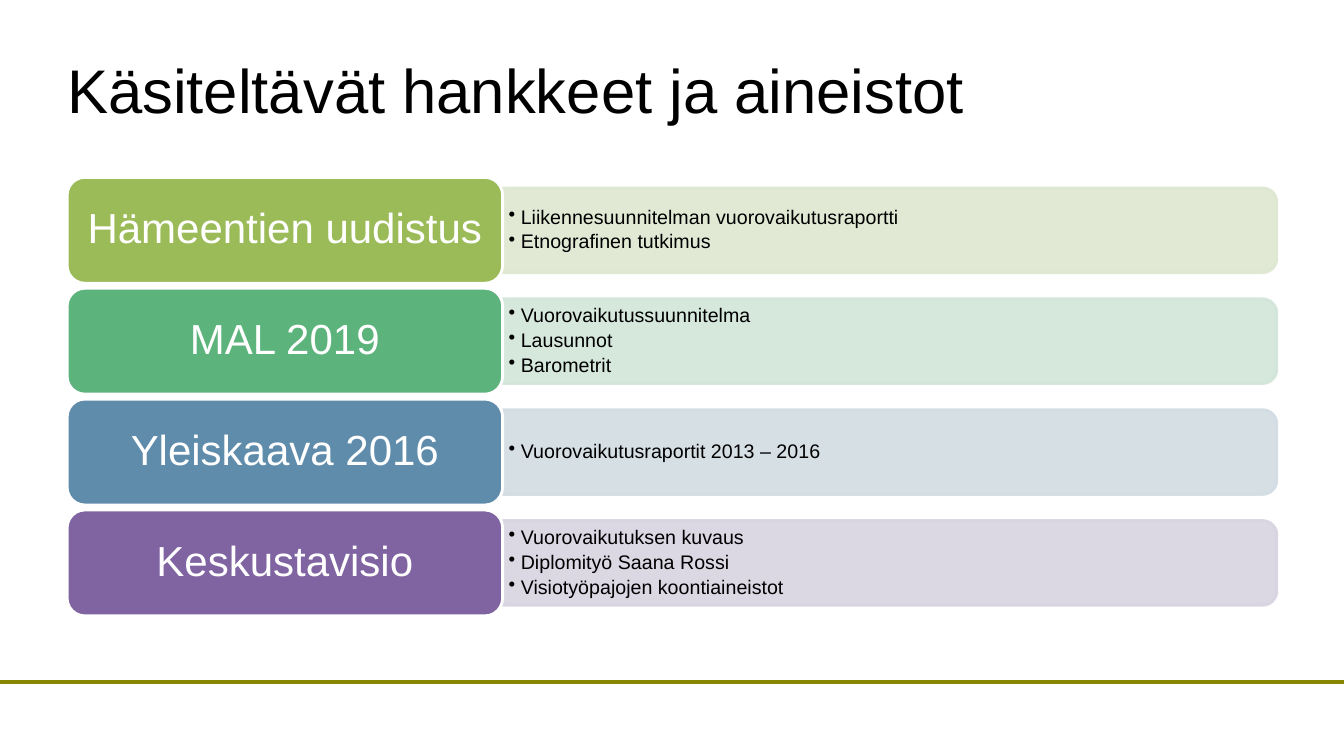
from dataclasses import dataclass

from lxml.etree import SubElement
from pptx import Presentation
from pptx.dml.color import RGBColor
from pptx.enum.shapes import MSO_CONNECTOR, MSO_SHAPE as Geometry
from pptx.enum.text import MSO_ANCHOR as Anchor, PP_ALIGN as Align
from pptx.oxml.ns import qn
from pptx.shapes.autoshape import Shape
from pptx.slide import Slide
from pptx.text.text import TextFrame, _Paragraph as Paragraph
from pptx.util import Inches, Pt

WIDTH, HEIGHT = 13.33, 7.5
COLUMN = WIDTH * 0.036
MARGIN = WIDTH * 0.05
LABEL_WIDTH, BAND_WIDTH = 9 * COLUMN, 16 * COLUMN
BAND_LEFT = MARGIN + LABEL_WIDTH
FIRST_ROW, ROW_PITCH = 1.76, 1.1
LABEL_HEIGHT, BAND_HEIGHT, MATERIALS_HEIGHT = 1.05, 0.84, 0.76
COLOURS = {
    "text": "000000", "white": "FFFFFF", "rule": "878802",
    "olive": "9BBB59", "olive band": "DEE7D1",
    "green": "5CB37C", "green band": "D2E5D9",
    "blue": "608CAB", "blue band": "D2DCE2",
    "purple": "8064A2", "purple band": "D8D3E0",
}


@dataclass(frozen=True)
class Project:
    """A planning project with its hue and source materials."""
    title: str
    hue: str
    materials: tuple[str, ...]


PROJECTS = (
    Project("Hämeentien uudistus", "olive",
            ("Liikennesuunnitelman vuorovaikutusraportti", "Etnografinen tutkimus")),
    Project("MAL 2019", "green",
            ("Vuorovaikutussuunnitelma", "Lausunnot", "Barometrit")),
    Project("Yleiskaava 2016", "blue", ("Vuorovaikutusraportit 2013 – 2016",)),
    Project("Keskustavisio", "purple",
            ("Vuorovaikutuksen kuvaus", "Diplomityö Saana Rossi",
             "Visiotyöpajojen koontiaineistot")),
)


def colour(name: str) -> RGBColor:
    """Look up a named colour."""
    return RGBColor.from_string(COLOURS[name])


def set_frame(frame: TextFrame, across: float, down: float) -> None:
    """Wrap and vertically centre a frame with the given insets."""
    frame.word_wrap = True
    frame.vertical_anchor = Anchor.MIDDLE
    frame.margin_left = frame.margin_right = Inches(across)
    frame.margin_top = frame.margin_bottom = Inches(down)


def write(paragraph: Paragraph, text: str, size: float, ink: str) -> None:
    """Fill a paragraph with text in the slide's typeface."""
    paragraph.text = text
    paragraph.line_spacing = 0.9
    paragraph.font.name = "Arial"
    paragraph.font.size = Pt(size)
    paragraph.font.color.rgb = colour(ink)


def add_block(slide: Slide, geometry: Geometry, left: float, top: float,
              width: float, height: float, fill: str, outline: str) -> Shape:
    """Add a flat filled shape with a two-point outline."""
    block = slide.shapes.add_shape(
        geometry, Inches(left), Inches(top), Inches(width), Inches(height))
    block.shadow.inherit = False
    block.fill.solid()
    block.fill.fore_color.rgb = colour(fill)
    block.line.color.rgb = colour(outline)
    block.line.width = Pt(2)
    return block


def add_band(slide: Slide, middle: float, hue: str) -> None:
    """Add a translucent band rounded at its right end."""
    band = add_block(slide, Geometry.ROUND_2_SAME_RECTANGLE,
                     BAND_LEFT + (BAND_WIDTH - BAND_HEIGHT) / 2,
                     middle - BAND_WIDTH / 2, BAND_HEIGHT, BAND_WIDTH, hue, hue)
    band.rotation = 90
    for tint in band._element.spPr.iter(qn("a:srgbClr")):
        SubElement(tint, qn("a:alpha"), val="90000")


def add_materials(slide: Slide, middle: float, materials: tuple[str, ...]) -> None:
    """List a project's materials as bullets over its band."""
    listing = slide.shapes.add_textbox(
        Inches(BAND_LEFT), Inches(middle - MATERIALS_HEIGHT / 2),
        Inches(BAND_WIDTH - 0.04), Inches(MATERIALS_HEIGHT)).text_frame
    set_frame(listing, 0.06, 0.03)
    for index, material in enumerate(materials):
        item = listing.add_paragraph() if index else listing.paragraphs[0]
        item.level = 1
        properties = item._p.get_or_add_pPr()
        properties.set("marL", str(Inches(0.12)))
        properties.set("indent", str(-Inches(0.12)))
        SubElement(properties, qn("a:buChar"), char="•")
        item.space_after = Pt(2.5)
        write(item, material, 14, "text")


def add_project(slide: Slide, project: Project, row: int) -> None:
    """Draw one project row with its band, materials and label."""
    top = FIRST_ROW + row * ROW_PITCH
    middle = top + LABEL_HEIGHT / 2
    add_band(slide, middle, f"{project.hue} band")
    add_materials(slide, middle, project.materials)
    label = add_block(slide, Geometry.ROUNDED_RECTANGLE, MARGIN, top,
                      LABEL_WIDTH, LABEL_HEIGHT, project.hue, "white").text_frame
    set_frame(label, 0.12, 0.06)
    label.paragraphs[0].alignment = Align.CENTER
    write(label.paragraphs[0], project.title, 30, "white")


def add_rule(slide: Slide) -> None:
    """Draw the footer rule across the slide."""
    level = Inches(6.77)
    rule = slide.shapes.add_connector(
        MSO_CONNECTOR.STRAIGHT, 0, level, Inches(WIDTH), level)
    rule.line.color.rgb = colour("rule")
    rule.line.width = Pt(2.83)
    SubElement(rule._element.spPr, qn("a:effectLst"))


def add_heading(slide: Slide, text: str) -> None:
    """Place the slide heading above the rows."""
    heading = slide.shapes.add_textbox(
        Inches(MARGIN), Inches(HEIGHT * 0.04),
        Inches(WIDTH * 0.9), Inches(1.25)).text_frame
    set_frame(heading, 0, 0)
    write(heading.paragraphs[0], text, 44, "text")


def main() -> None:
    """Build and save the slide."""
    deck = Presentation()
    deck.slide_width, deck.slide_height = Inches(WIDTH), Inches(HEIGHT)
    slide = deck.slides.add_slide(deck.slide_layouts[6])
    add_rule(slide)
    add_heading(slide, "Käsiteltävät hankkeet ja aineistot")
    for row, project in enumerate(PROJECTS):
        add_project(slide, project, row)
    deck.save("out.pptx")


if __name__ == "__main__":
    main()
